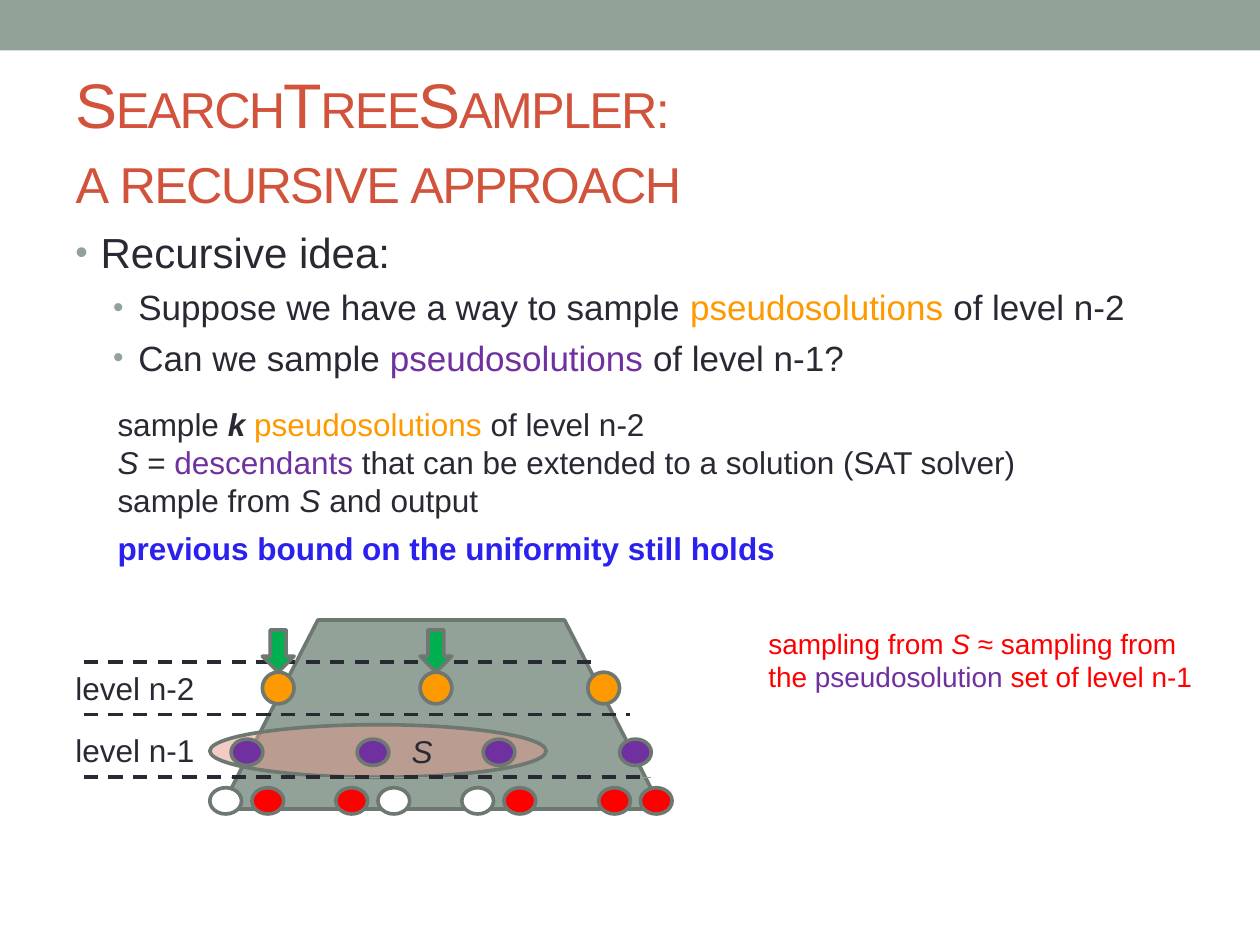
import copy
import pptx
import pptx.dml.color
import pptx.enum.dml
import pptx.enum.shapes
import pptx.enum.text
import pptx.oxml.ns
import pptx.oxml.xmlchemy
import pptx.util
from lxml import etree

Cm = pptx.util.Cm
Pt = pptx.util.Pt
RGB = pptx.dml.color.RGBColor.from_string
qn = pptx.oxml.ns.qn
SHAPE = pptx.enum.shapes.MSO_SHAPE

COLOURS = {
    "sage": "93A299", "outline": "6D7871", "ink": "292934", "title": "D2533C",
    "orange": "FF9900", "purple": "7030A0", "red": "FF0000", "white": "FFFFFF",
    "green": "00B050", "blue": "2B21EF", "salmon": "E4988A",
}

deck = pptx.Presentation()
deck.slide_width, deck.slide_height = Cm(25.4), Cm(19.05)
page = deck.slides.add_slide(deck.slide_layouts[5])


def add_figure(kind, left, top, width, height, colour):
    figure = page.shapes.add_shape(kind, Cm(left), Cm(top), Cm(width), Cm(height))
    figure.shadow.inherit = False
    figure.fill.solid()
    figure.fill.fore_color.rgb = RGB(COLOURS[colour])
    figure.line.color.rgb = RGB(COLOURS["outline"])
    figure.line.width = Pt(2.08)
    return figure


def add_text(left, top, width, height, size, lines):
    box = page.shapes.add_textbox(Cm(left), Cm(top), Cm(width), Cm(height))
    frame = box.text_frame
    frame.word_wrap = True
    for number, line in enumerate(lines):
        para = frame.add_paragraph() if number else frame.paragraphs[0]
        for text, colour, style in line:
            span = para.add_run()
            span.text = text
            span.font.name = "Arial"
            span.font.size = Pt(size)
            span.font.color.rgb = RGB(COLOURS[colour])
            span.font.bold = "b" in style
            span.font.italic = "i" in style
    return frame


band = add_figure(SHAPE.RECTANGLE, 0, 0, 25.4, 1.02, "sage")
band.line.fill.background()

title = page.shapes.title
title.left, title.top, title.width, title.height = Cm(1.27), Cm(1.47), Cm(22.86), Cm(2.74)
title.text_frame.text = "SearchTreeSampler: \va recursive approach"
title.text_frame.auto_size = pptx.enum.text.MSO_AUTO_SIZE.NONE
title.text_frame.vertical_anchor = pptx.enum.text.MSO_ANCHOR.MIDDLE
heading = title.text_frame.paragraphs[0]
heading.alignment = pptx.enum.text.PP_ALIGN.LEFT
for span in heading.runs:
    span.font.name = "Arial"
    span.font.size = Pt(36)
    span.font.color.rgb = RGB(COLOURS["title"])
    span.font._element.set("cap", "small")
    span.font._element.set("spc", "-100")
line_break = heading._p.find(qn("a:br"))
line_break.insert(0, copy.deepcopy(heading.runs[0].font._element))

trapezoid = add_figure(SHAPE.TRAPEZOID, 4.45, 12.5, 8.89, 3.81, "sage")
trapezoid.adjustments[0] = 0.514
sample_set = add_figure(SHAPE.OVAL, 4.23, 14.61, 6.78, 1.06, "salmon")
tint = sample_set.fill._xPr.find(".//" + qn("a:srgbClr"))
etree.SubElement(tint, qn("a:alpha"), val="50000")

node_rows = [
    ("red", 15.88, 0.53, [5.08, 6.77, 10.16, 12.07, 12.91]),
    ("white", 15.88, 0.53, [4.23, 7.62, 9.31]),
    ("purple", 14.9, 0.53, [4.66, 7.2, 9.74, 12.49]),
]
for colour, top, height, lefts in node_rows:
    for left in lefts:
        add_figure(SHAPE.OVAL, left, top, 0.64, height, colour)

bullets = add_text(1.27, 4.45, 22.86, 3.81, 20, [
    [("Recursive idea:", "ink", "")],
    [("Suppose we have a way to sample ", "ink", ""), ("pseudosolutions ", "orange", ""),
     ("of level n-2", "ink", "")],
    [("Can we sample ", "ink", ""), ("pseudosolutions ", "purple", ""),
     ("of level n-1?", "ink", "")],
])
bullets.paragraphs[0].runs[0].font.size = Pt(24)
for para, indent in zip(bullets.paragraphs, [0.51, 1.27, 1.27]):
    para.space_before = Pt(4.8)
    properties = para._p.get_or_add_pPr()
    properties.set("marL", str(Cm(indent)))
    properties.set("indent", str(-Cm(0.51)))
    bullet_colour = etree.SubElement(properties, qn("a:buClr"))
    etree.SubElement(bullet_colour, qn("a:srgbClr"), val=COLOURS["sage"])
    etree.SubElement(properties, qn("a:buSzPct"), val="85000")
    etree.SubElement(properties, qn("a:buFont"), typeface="Arial")
    etree.SubElement(properties, qn("a:buChar"), char="•")

steps = add_text(2.12, 8.05, 22.01, 3.56, 18, [
    [("sample ", "ink", ""), ("k ", "ink", "bi"), ("pseudosolutions ", "orange", ""),
     ("of level n-2", "ink", "")],
    [("S", "ink", "i"), (" = ", "ink", ""), ("descendants", "purple", ""),
     (" that can be extended to a solution (SAT solver)", "ink", "")],
    [("sample from ", "ink", ""), ("S ", "ink", "i"), ("and output", "ink", "")],
    [("previous bound on the uniformity still holds", "blue", "b")],
])
steps.paragraphs[-1].space_before = Pt(5.5)

level_lines = [
    (4.66, 13.12, 15.67, "sage", 0.75),
    (1.69, 13.12, 15.66, "ink", 2),
    (1.69, 12.7, 14.4, "ink", 2),
    (1.69, 12.07, 13.34, "ink", 2),
]
for start, end, height, colour, width in level_lines:
    rule = page.shapes.add_connector(
        pptx.enum.shapes.MSO_CONNECTOR.STRAIGHT, Cm(start), Cm(height), Cm(end), Cm(height))
    rule.line.color.rgb = RGB(COLOURS[colour])
    rule.line.width = Pt(width)
    if colour == "ink":
        rule.line.dash_style = pptx.enum.dml.MSO_LINE.DASH
    etree.SubElement(rule._element.spPr, qn("a:effectLst"))

for left in [5.29, 8.47, 11.85]:
    add_figure(SHAPE.OVAL, left, 13.55, 0.64, 0.64, "orange")
for left in [5.29, 8.47]:
    add_figure(SHAPE.DOWN_ARROW, left, 12.7, 0.64, 0.85, "green")

add_text(1.27, 13.36, 8.26, 1.02, 18, [[("level n-2", "ink", "")]])
add_text(1.27, 14.61, 8.26, 1.02, 18, [[("level n-1", "ink", "")]])
add_text(8.05, 14.63, 1.47, 1.02, 18, [[("S", "ink", "i")]])
add_text(15.24, 12.5, 9.53, 1.63, 16, [
    [("sampling from ", "red", ""), ("S", "red", "i"), (" ≈ sampling from the ", "red", ""),
     ("pseudosolution ", "purple", ""), ("set of level n-1", "red", "")],
])

deck.save("out.pptx")
